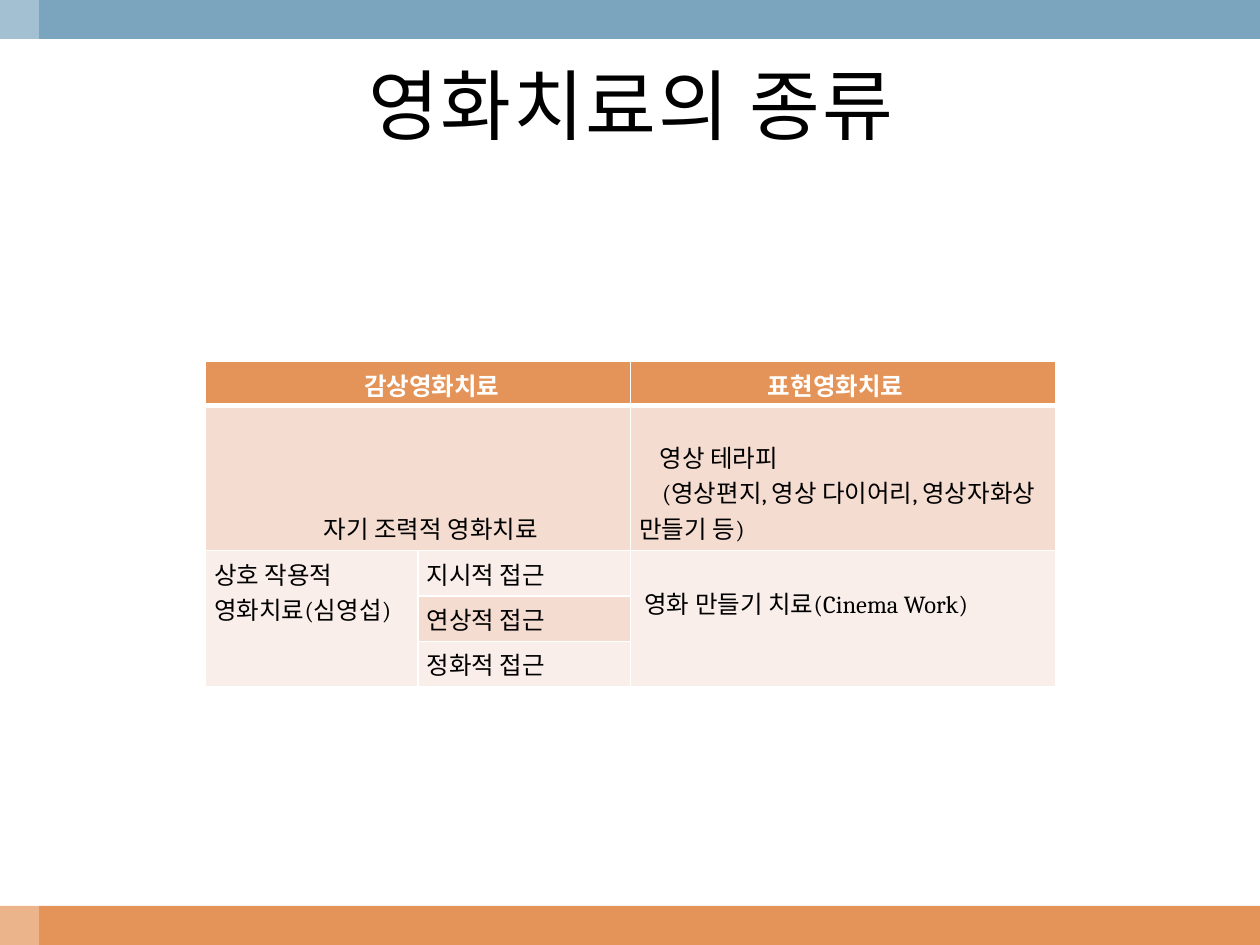
from dataclasses import dataclass

from lxml.etree import SubElement
from pptx import Presentation
from pptx.dml.color import RGBColor
from pptx.enum.shapes import MSO_SHAPE as Shape
from pptx.enum.text import MSO_ANCHOR as Anchor, PP_ALIGN as Align
from pptx.oxml.ns import qn
from pptx.util import Emu, Inches, Pt

WIDTH, HEIGHT = 10, 7.5
BAND = 0.31
FONT = "Cambria"
WHITE, BLACK = "FFFFFF", "000000"
ORANGE, BLUE = "E49458", "7BA5BE"
PEACH, PALE = "F5DCD1", "FAEEEA"
UNIT = 6.75 / 4  # the table is four units wide: 1 + 1 + 2
COLS = (UNIT, UNIT, 2 * UNIT)
ROWS = (0.35, 1.15, 0.36, 0.36, 0.36)


@dataclass
class Line:
    text: str
    left: float = 0
    first: float = 0


@dataclass
class Cell:
    row: int
    col: int
    lines: tuple[Line, ...]
    fill: str
    rows: int = 1
    cols: int = 1
    anchor: Anchor = Anchor.TOP
    top: float = 0.04


CELLS = (
    Cell(0, 0, (Line("감상영화치료", 1.19),), ORANGE, cols=2),
    Cell(0, 2, (Line("표현영화치료", 1.02),), ORANGE),
    Cell(1, 0, (Line("자기 조력적 영화치료", 0.87),), PEACH, cols=2,
         anchor=Anchor.BOTTOM),
    Cell(1, 2, (Line("영상 테라피", 0.16),
                Line("(영상편지, 영상 다이어리, 영상자화상 만들기 등)", first=0.18)),
         PEACH, anchor=Anchor.BOTTOM),
    Cell(2, 0, (Line("상호 작용적"), Line("영화치료(심영섭)")), PALE, rows=3),
    Cell(2, 1, (Line("지시적 접근"),), PALE),
    Cell(3, 1, (Line("연상적 접근"),), PEACH),
    Cell(4, 1, (Line("정화적 접근"),), PALE),
    Cell(2, 2, (Line("영화 만들기 치료(Cinema Work)", 0.04),), PALE,
         rows=3, top=0.27),
)


def rgb(color: str) -> RGBColor:
    return RGBColor.from_string(color)


def set_font(r, color: str, **values) -> None:
    for name, value in {"name": FONT, **values}.items():
        setattr(r.font, name, value)
    r.font.color.rgb = rgb(color)


def add_band(s, left: float, top: float, width: float, height: float,
             color: str, alpha: int = 100) -> None:
    sp = s.shapes.add_shape(Shape.RECTANGLE, *map(Inches, (left, top, width, height)))
    sp.shadow.inherit = False
    sp.line.fill.background()
    sp.fill.solid()
    sp.fill.fore_color.rgb = rgb(color)
    if alpha < 100:
        clr = sp.fill._xPr.find(qn("a:solidFill"))[0]
        SubElement(clr, qn("a:alpha"), val=str(alpha * 1000))


def add_title(s, text: str) -> None:
    sp = s.shapes.add_textbox(*map(Inches, (0.33, BAND, 9.36, 1.03)))
    tf = sp.text_frame
    tf.word_wrap = True
    tf.vertical_anchor = Anchor.MIDDLE
    p = tf.paragraphs[0]
    p.alignment = Align.CENTER
    r = p.add_run()
    r.text = text
    set_font(r, BLACK, size=Pt(44))
    r.font._element.set("spc", "100")


def set_borders(cell, **widths: float) -> None:
    """Draw white borders; they must precede the fill in the cell properties."""
    pr = cell._tc.get_or_add_tcPr()
    for i, (side, width) in enumerate(widths.items()):
        ln = SubElement(pr, qn(f"a:ln{side}"), w=str(Pt(width)))
        solid = SubElement(ln, qn("a:solidFill"))
        SubElement(solid, qn("a:srgbClr"), val=WHITE)
        pr.insert(i, ln)


def fill_cell(table, c: Cell) -> None:
    cell = table.cell(c.row, c.col)
    if c.rows * c.cols > 1:
        cell.merge(table.cell(c.row + c.rows - 1, c.col + c.cols - 1))
    for name, value in {"margin_left": Inches(0.07), "margin_right": Inches(0.07),
                        "margin_top": Inches(c.top), "margin_bottom": Inches(0.04),
                        "vertical_anchor": c.anchor}.items():
        setattr(cell, name, value)
    tf = cell.text_frame
    header = c.row == 0
    for i, line in enumerate(c.lines):
        p = tf.add_paragraph() if i else tf.paragraphs[0]
        pr = p._p.get_or_add_pPr()
        pr.set("marL", str(Inches(line.left)))
        pr.set("indent", str(Inches(line.first)))
        r = p.add_run()
        r.text = line.text
        set_font(r, WHITE if header else BLACK, size=Pt(14), bold=header)
    for row in range(c.row, c.row + c.rows):
        for col in range(c.col, c.col + c.cols):
            part = table.cell(row, col)
            part.fill.solid()
            part.fill.fore_color.rgb = rgb(c.fill)
            set_borders(part, L=1, R=1, T=3 if row == 1 else 1, B=3 if header else 1)


def add_therapy_table(s) -> None:
    frame = s.shapes.add_table(len(ROWS), len(COLS), Inches(1.63), Inches(2.87),
                               Inches(sum(COLS)), Inches(sum(ROWS)))
    table = frame.table
    for column, width in zip(table.columns, COLS):
        column.width = Emu(Inches(width))
    for row, height in zip(table.rows, ROWS):
        row.height = Inches(height)
    for c in CELLS:
        fill_cell(table, c)


def main() -> None:
    prs = Presentation()
    prs.slide_width, prs.slide_height = Inches(WIDTH), Inches(HEIGHT)
    s = prs.slides.add_slide(prs.slide_layouts[6])
    add_band(s, 0, HEIGHT - BAND, WIDTH, BAND, ORANGE)
    add_band(s, 0, 0, WIDTH, BAND, BLUE)
    add_band(s, 0, 0, BAND, HEIGHT, WHITE, alpha=30)
    add_title(s, "영화치료의 종류")
    add_therapy_table(s)
    prs.save("out.pptx")


if __name__ == "__main__":
    main()
